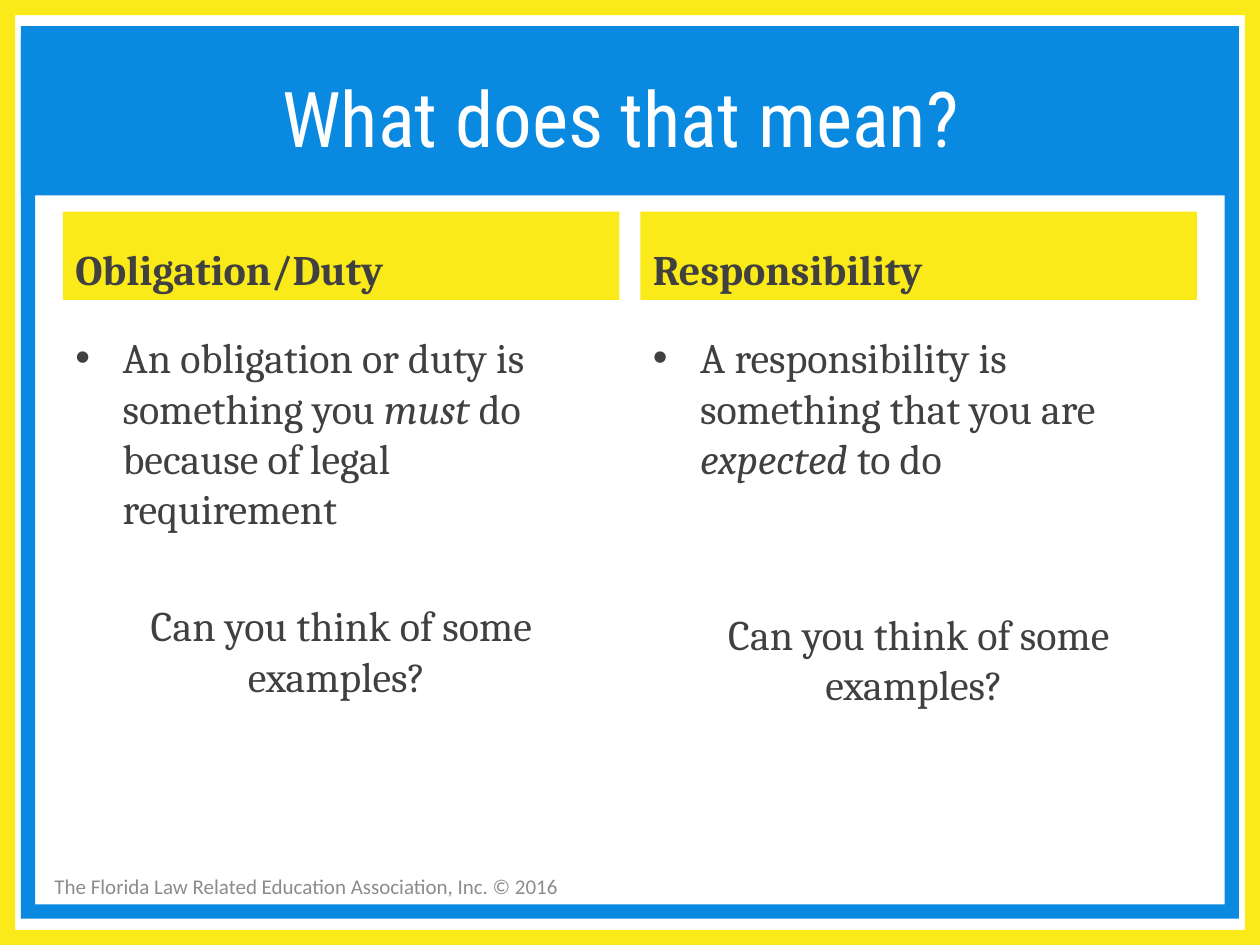
from dataclasses import dataclass

from lxml.etree import SubElement
from pptx import Presentation
from pptx.dml.color import RGBColor
from pptx.enum.shapes import MSO_SHAPE
from pptx.enum.text import MSO_ANCHOR, PP_ALIGN
from pptx.oxml.ns import qn
from pptx.util import Pt


@dataclass(frozen=True)
class Theme:
    yellow: RGBColor = RGBColor(0xFA, 0xEA, 0x1A)
    blue: RGBColor = RGBColor(0x0A, 0x89, 0xE0)
    white: RGBColor = RGBColor(0xFF, 0xFF, 0xFF)
    ink: RGBColor = RGBColor(0x40, 0x40, 0x40)
    grey: RGBColor = RGBColor(0x8C, 0x8C, 0x8C)
    title_size: int = 44
    body_size: int = 24
    footer_size: int = 12


THEME = Theme()
TITLE_FONT = {"name": "Roboto Condensed", "size": Pt(THEME.title_size)}
BODY_FONT = {"name": "Cambria", "size": Pt(THEME.body_size)}
HEADING_FONT = {**BODY_FONT, "bold": True}
FOOTER_FONT = {"name": "Calibri", "size": Pt(THEME.footer_size)}

COLUMN_WIDTH = 318
COLUMN_LEFTS = (36, 366)
QUESTION = "Can you think of some examples? "
COLUMNS = [
    ("Obligation/Duty",
     ("An obligation or duty is something you ", "must",
      " do because of legal requirement"), 38),
    ("Responsibility",
     ("A responsibility is something that you are ", "expected", " to do"), 71.5),
]


def add_block(page, preset, bounds, color):
    block = page.shapes.add_shape(preset, *map(Pt, bounds))
    block.shadow.inherit = False
    block.fill.solid()
    block.fill.fore_color.rgb = color
    block.line.fill.background()
    return block


def add_frame(page, bounds, color):
    frame = add_block(page, MSO_SHAPE.FRAME, bounds, color)
    frame.adjustments[0] = 0.016


def add_box(page, bounds):
    return page.shapes.add_textbox(*map(Pt, bounds))


def prepare_text(box, anchor):
    box.text_frame.word_wrap = True
    box.text_frame.vertical_anchor = anchor
    return box.text_frame.paragraphs[0]


def add_span(para, text, format_values, color):
    span = para.add_run()
    span.text = text
    for name, value in format_values.items():
        setattr(span.font, name, value)
    span.font.color.rgb = color


def set_bullet(para):
    properties = para._p.get_or_add_pPr()
    properties.set("marL", str(Pt(27)))
    properties.set("indent", str(-Pt(27)))
    SubElement(properties, qn("a:buFont"), typeface="Arial")
    SubElement(properties, qn("a:buChar"), char="•")


def write_line(box, text, anchor, alignment, format_values, color):
    para = prepare_text(box, anchor)
    para.alignment = alignment
    add_span(para, text, format_values, color)


def add_column(page, left, heading, definition, question_gap):
    banner = add_block(page, MSO_SHAPE.RECTANGLE,
                       (left, 121, COLUMN_WIDTH, 50.4), THEME.yellow)
    write_line(banner, heading, MSO_ANCHOR.BOTTOM, PP_ALIGN.LEFT,
               HEADING_FONT, THEME.ink)

    box = add_box(page, (left, 186, COLUMN_WIDTH, 311))
    para = prepare_text(box, MSO_ANCHOR.TOP)
    set_bullet(para)
    before, stressed, after = definition
    for text, italic in ((before, False), (stressed, True), (after, False)):
        add_span(para, text, {**BODY_FONT, "italic": italic}, THEME.ink)

    question = box.text_frame.add_paragraph()
    question.alignment = PP_ALIGN.CENTER
    question.space_before = Pt(question_gap)
    add_span(question, QUESTION, BODY_FONT, THEME.ink)


def main():
    deck = Presentation()
    deck.slide_width, deck.slide_height = Pt(720), Pt(540)
    page = deck.slides.add_slide(deck.slide_layouts[6])

    footer = add_box(page, (24, 492, 306, 29))
    write_line(footer, "The Florida Law Related Education Association, Inc. © 2016",
               MSO_ANCHOR.MIDDLE, PP_ALIGN.LEFT, FOOTER_FONT, THEME.grey)

    add_frame(page, (0, 0, 720, 540), THEME.yellow)
    add_frame(page, (12, 15, 696, 510), THEME.blue)
    title = add_block(page, MSO_SHAPE.RECTANGLE, (12, 21.6, 696, 90), THEME.blue)
    write_line(title, "What does that mean? ", MSO_ANCHOR.MIDDLE, PP_ALIGN.CENTER,
               TITLE_FONT, THEME.white)

    for left, column in zip(COLUMN_LEFTS, COLUMNS):
        add_column(page, left, *column)

    deck.save("out.pptx")


if __name__ == "__main__":
    main()
